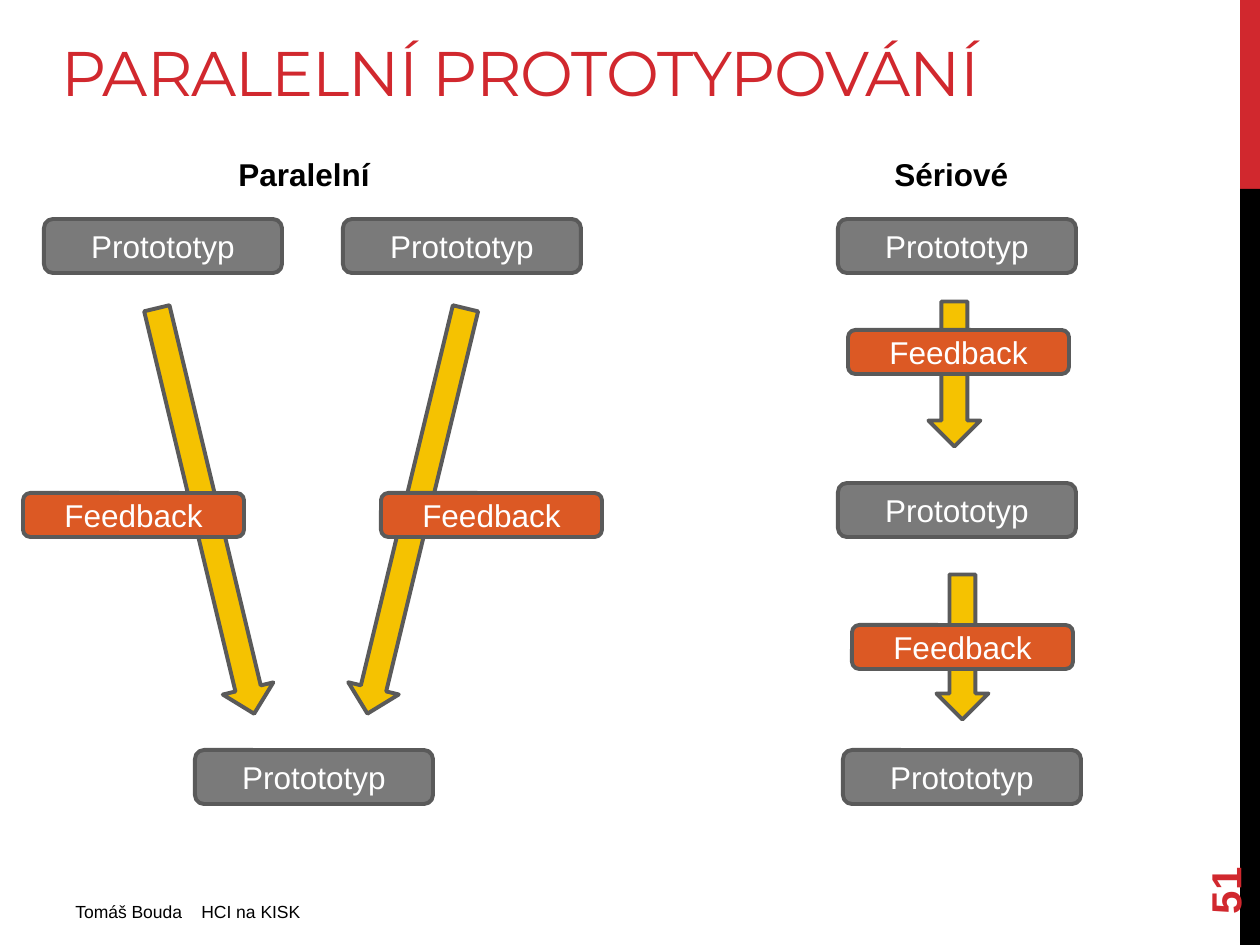
import pptx
import pptx.dml.color
import pptx.enum.shapes
import pptx.enum.text
import pptx.util
from dataclasses import dataclass

SHAPE = pptx.enum.shapes.MSO_SHAPE
ALIGN = pptx.enum.text.PP_ALIGN
ANCHOR = pptx.enum.text.MSO_ANCHOR
EMU_PER_PX = 914400 / 126


@dataclass(frozen=True)
class Theme:
    red: str = "D1282E"
    black: str = "000000"
    white: str = "FFFFFF"
    gray: str = "7A7A7A"
    outline: str = "5A5A5A"
    yellow: str = "F5C201"
    orange: str = "DC5924"
    heading_font: str = "Montserrat"
    body_font: str = "Arial"
    title_size: int = 36
    number_size: int = 24
    body_size: int = 18
    footer_size: int = 10


theme = Theme()


def px(*lengths):
    return [pptx.util.Emu(round(length * EMU_PER_PX)) for length in lengths]


def write(frame, text, size, color, font=theme.body_font, bold=False,
          align=ALIGN.LEFT, **frame_format):
    """Fill a text frame with one run; frame_format holds text frame attributes."""
    for name, value in frame_format.items():
        setattr(frame, name, value)
    paragraph = frame.paragraphs[0]
    paragraph.alignment = align
    run = paragraph.add_run()
    run.text = text
    for name, value in {"name": font, "size": pptx.util.Pt(size), "bold": bold}.items():
        setattr(run.font, name, value)
    run.font.color.rgb = pptx.dml.color.RGBColor.from_string(color)
    return run


deck = pptx.Presentation()
deck.slide_width, deck.slide_height = px(1260, 945)
slide = deck.slides.add_slide(deck.slide_layouts[5])

# Side band
for top, height, color in [(0, 189, theme.red), (189, 756, theme.black)]:
    band = slide.shapes.add_shape(SHAPE.RECTANGLE, *px(1240, top, 20, height))
    band.shadow.inherit = False
    band.fill.solid()
    band.fill.fore_color.rgb = pptx.dml.color.RGBColor.from_string(color)
    band.line.fill.background()

# Title
title = slide.shapes.title
title.left, title.top, title.width, title.height = px(49, 0, 1103, 115)
heading = write(title.text_frame, "PARALELNÍ PROTOTYPOVÁNÍ", theme.title_size, theme.red,
                theme.heading_font, vertical_anchor=ANCHOR.BOTTOM, word_wrap=True,
                auto_size=pptx.enum.text.MSO_AUTO_SIZE.NONE)
heading.font._element.set("spc", "-60")

# Footer and slide number
footer = slide.shapes.add_textbox(*px(63, 895, 473, 39))
write(footer.text_frame, "Tomáš Bouda\tHCI na KISK", theme.footer_size, theme.black,
      word_wrap=True)
number = slide.shapes.add_textbox(*px(1134, 811, 181, 50))
number.rotation = 270
write(number.text_frame, "51", theme.number_size, theme.red, bold=True,
      word_wrap=True, vertical_anchor=ANCHOR.MIDDLE)

# Flow: kind, fill, label, size, then left, top and rotation of each step
flow = [
    (SHAPE.ROUNDED_RECTANGLE, theme.gray, "Protototyp", (238, 54),
     [(44, 219, 0), (343, 219, 0), (195, 750, 0),
      (838, 219, 0), (838, 483, 0), (843, 750, 0)]),
    (SHAPE.LEFT_ARROW, theme.yellow, "", (417, 52),
     [(-3, 485, 256.5), (208, 485, 283.6)]),
    (SHAPE.LEFT_ARROW, theme.yellow, "", (145, 52),
     [(882, 348, 270), (890, 621, 270)]),
    (SHAPE.ROUNDED_RECTANGLE, theme.orange, "Feedback", (221, 44),
     [(23, 493, 0), (381, 493, 0), (848, 330, 0), (852, 625, 0)]),
]
for kind, fill, label, size, places in flow:
    for left, top, rotation in places:
        step = slide.shapes.add_shape(kind, *px(left, top, *size))
        step.rotation = rotation
        step.shadow.inherit = False
        step.fill.solid()
        step.fill.fore_color.rgb = pptx.dml.color.RGBColor.from_string(fill)
        step.line.color.rgb = pptx.dml.color.RGBColor.from_string(theme.outline)
        step.line.width = pptx.util.Pt(2.25)
        if label:
            write(step.text_frame, label, theme.body_size, theme.white,
                  align=ALIGN.CENTER, vertical_anchor=ANCHOR.MIDDLE)

# Column headings
for text, left, width in [("Paralelní", 226, 166), ("Sériové", 882, 140)]:
    column = slide.shapes.add_textbox(*px(left, 149, width, 50))
    write(column.text_frame, text, theme.body_size, theme.black, bold=True,
          word_wrap=False, auto_size=pptx.enum.text.MSO_AUTO_SIZE.SHAPE_TO_FIT_TEXT)

deck.save("out.pptx")
